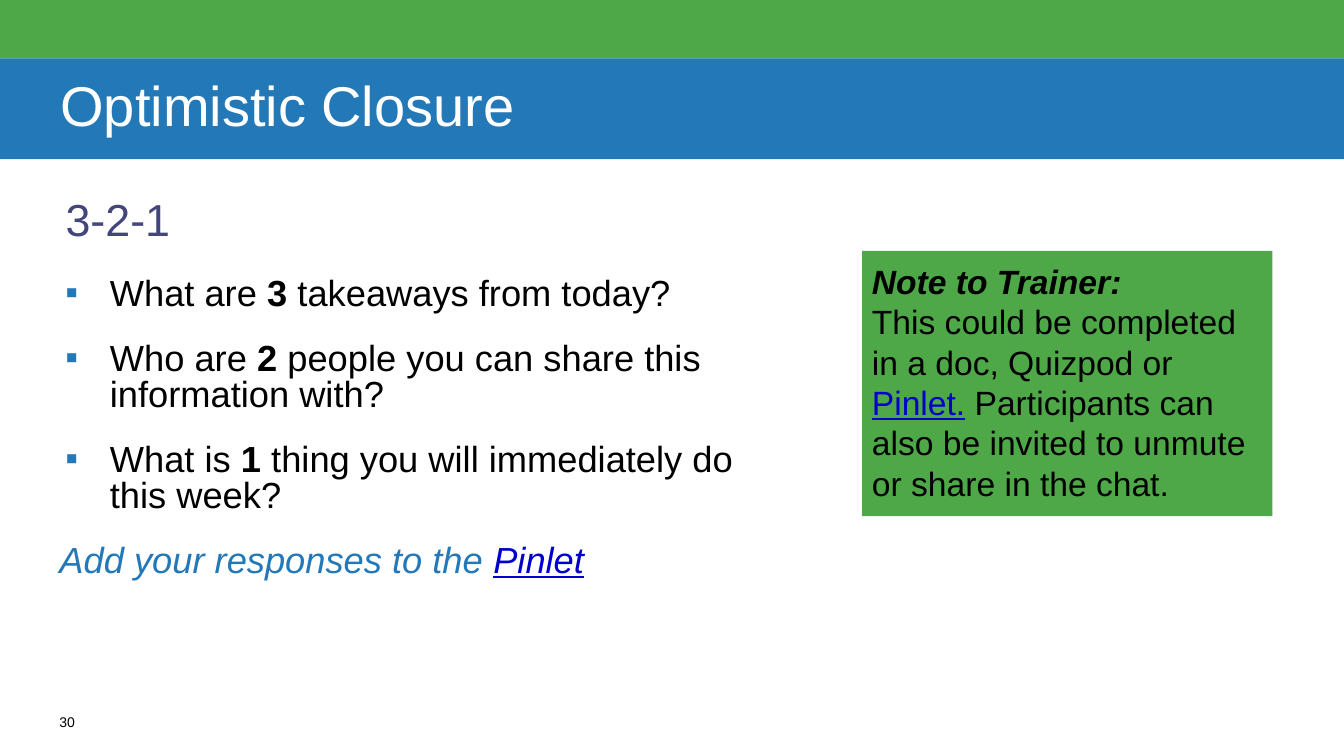
from lxml import etree
from pptx import Presentation
from pptx import util as u
from pptx.dml.color import RGBColor
from pptx.enum import shapes, text
from pptx.oxml import ns

PX = 9144  # EMU in one px, 100 px to the inch
FONT = "Arial"
GREEN = RGBColor(0x4E, 0xA8, 0x48)
BLUE = RGBColor(0x23, 0x79, 0xB8)
PURPLE = RGBColor(0x43, 0x46, 0x7B)
LINK = RGBColor(0x00, 0x00, 0xCC)
BLACK = RGBColor(0, 0, 0)
WHITE = RGBColor(255, 255, 255)

QUESTIONS = [
    ("What are ", "3", " takeaways from today?"),
    ("Who are ", "2", " people you can share this information with?"),
    ("What is ", "1", " thing you will immediately do this week?"),
]


def px(*lengths):
    return [u.Emu(length * PX) for length in lengths]


def add_bar(slide, box, color):
    shape = slide.shapes.add_shape(shapes.MSO_SHAPE.RECTANGLE, *px(*box))
    shape.shadow.inherit = False
    shape.fill.solid()
    shape.fill.fore_color.rgb = color
    shape.line.fill.background()
    return shape


def add_box(slide, box):
    return slide.shapes.add_textbox(*px(*box))


def set_frame(shape, insets=(0, 0, 0, 0), anchor=text.MSO_ANCHOR.TOP):
    frame = shape.text_frame
    frame.word_wrap = True
    frame.vertical_anchor = anchor
    (frame.margin_left, frame.margin_top,
     frame.margin_right, frame.margin_bottom) = px(*insets)
    return frame


def add_bullet(paragraph, color, left, hanging):
    properties = paragraph._p.get_or_add_pPr()
    properties.set("marL", str(left * PX))
    properties.set("indent", str(-hanging * PX))
    bullet_color = etree.SubElement(properties, ns.qn("a:buClr"))
    etree.SubElement(bullet_color, ns.qn("a:srgbClr"), val=str(color))
    etree.SubElement(properties, ns.qn("a:buFont"), typeface=FONT)
    etree.SubElement(properties, ns.qn("a:buChar"), char="▪")


def write(frame, *runs, size, color=BLACK, spacing=None, before=0, after=0,
          italic=False, bullet=None):
    """Add one paragraph; each run is a string or (string, font settings)."""
    first = not frame.paragraphs[0].runs
    paragraph = frame.paragraphs[0] if first else frame.add_paragraph()
    if bullet:
        add_bullet(paragraph, bullet, left=50, hanging=44)
    paragraph.alignment = text.PP_ALIGN.LEFT
    paragraph.line_spacing = spacing
    paragraph.space_before = u.Pt(0 if first else before)
    paragraph.space_after = u.Pt(after)
    for item in runs:
        words, settings = (item, {}) if isinstance(item, str) else item
        run = paragraph.add_run()
        run.text = words
        run.font.name = FONT
        run.font.size = u.Pt(size)
        run.font.bold = settings.get("bold", False)
        run.font.italic = settings.get("italic", italic)
        run.font.underline = settings.get("underline", False)
        run.font.color.rgb = settings.get("color", color)


def main():
    presentation = Presentation()
    presentation.slide_width, presentation.slide_height = px(1333, 750)
    slide = presentation.slides.add_slide(presentation.slide_layouts[6])
    link = {"color": LINK, "underline": True}

    # Header bands and title
    add_bar(slide, (0, 0, 1333, 58), GREEN)
    title = add_bar(slide, (0, 58, 1333, 100), BLUE)
    frame = set_frame(title, (60, 0, 60, 0), text.MSO_ANCHOR.MIDDLE)
    write(frame, "Optimistic Closure", size=40, color=WHITE, spacing=0.9)

    # Subtitle
    frame = set_frame(add_box(slide, (60, 185, 1215, 90)), (5, 5, 5, 5))
    write(frame, "3-2-1", size=32, color=PURPLE, after=6)

    # Questions and call to respond
    frame = set_frame(add_box(slide, (59, 275, 726, 345)))
    body = {"size": 25.9, "spacing": 0.84, "before": 20}
    for lead, count, rest in QUESTIONS:
        write(frame, lead, (count, {"bold": True}), rest, bullet=BLUE, **body)
    write(frame, "Add your responses to the ", ("Pinlet", link),
          color=BLUE, italic=True, after=20, **body)

    # Trainer note
    note = add_bar(slide, (855, 249, 407, 263), GREEN)
    frame = set_frame(note, (10, 10, 10, 10))
    write(frame, ("Note to Trainer:", {"bold": True, "italic": True}), size=24)
    write(frame, "This could be completed in a doc, Quizpod or ",
          ("Pinlet.", link),
          " Participants can also be invited to unmute or share in the chat.",
          size=24)

    # Slide number
    frame = set_frame(add_box(slide, (59, 708, 50, 26)))
    write(frame, "30", size=10)

    presentation.save("out.pptx")


if __name__ == "__main__":
    main()
